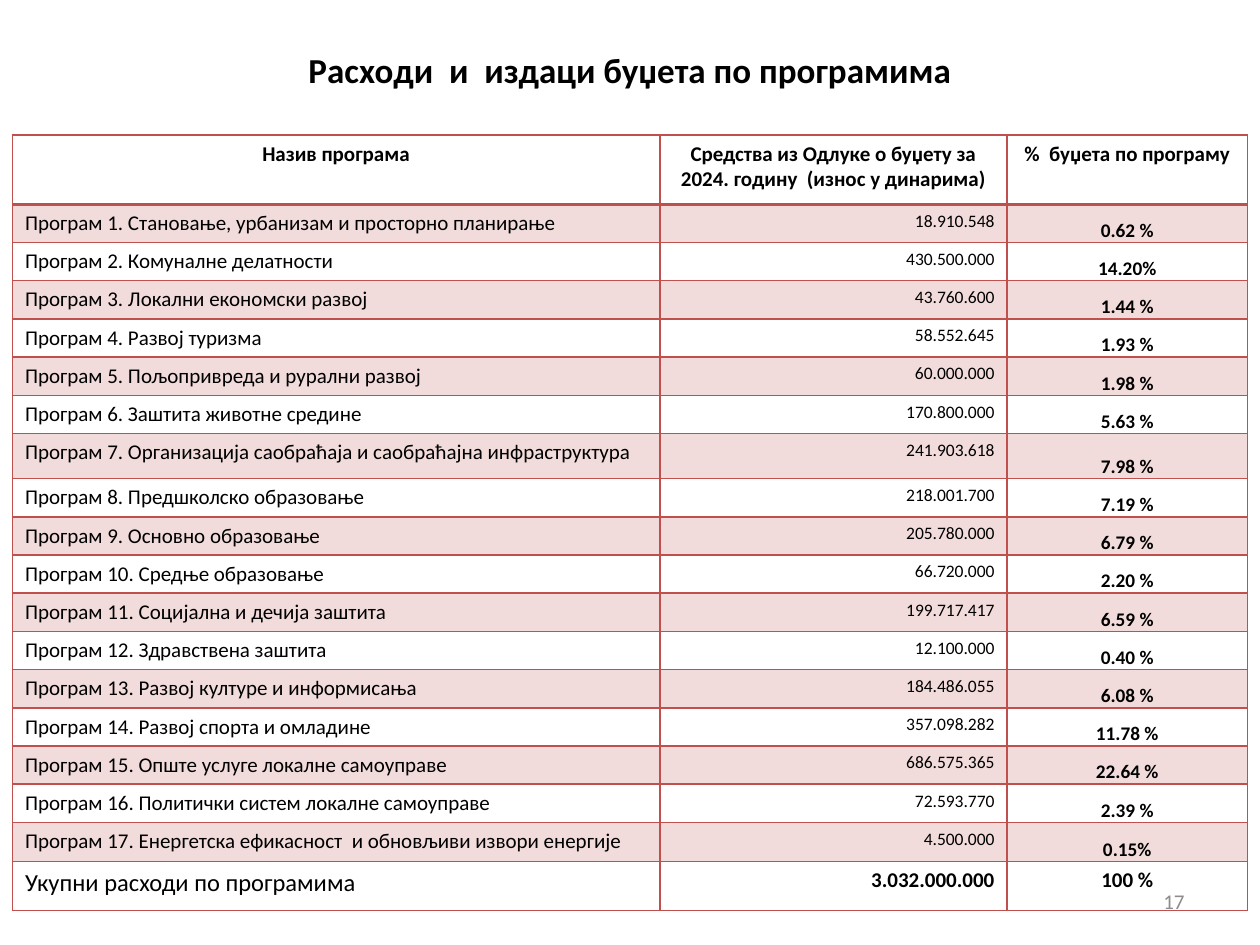
from lxml.etree import SubElement
from pptx import Presentation
from pptx.dml.color import RGBColor
from pptx.enum.text import MSO_ANCHOR as Anchor, PP_ALIGN as Align
from pptx.oxml.ns import qn
from pptx.util import Cm, Pt

FONT = "Calibri"
COLORS = {"text": "000000", "number": "8C8C8C", "border": "C0504D", "band": "F2DCDB"}
COLUMN_WIDTHS = [13.05, 7, 4.85]
HEADER_HEIGHT, ROW_HEIGHT, TOTAL_HEIGHT = 1.4, 0.77, 0.99
SPECIAL_HEIGHTS = {7: 0.91, 17: 0.79}

HEADERS = [
    "Назив програма",
    "Средства из Одлуке о буџету за 2024. годину  (износ у динарима)",
    "%  буџета по програму",
]
PROGRAMS = [
    ("Становање, урбанизам и просторно планирање", "18.910.548", "0.62 %"),
    ("Комуналне делатности", "430.500.000", "14.20%"),
    ("Локални економски развој", "43.760.600", "1.44 %"),
    ("Развој туризма", "58.552.645", "1.93 %"),
    ("Пољопривреда и рурални развој", "60.000.000", "1.98 %"),
    ("Заштита животне средине", "170.800.000", "5.63 %"),
    ("Организација саобраћаја и саобраћајна инфраструктура", "241.903.618", "7.98 %"),
    ("Предшколско образовање", "218.001.700", "7.19 %"),
    ("Основно образовање", "205.780.000", "6.79 %"),
    ("Средње образовање", "66.720.000", "2.20 %"),
    ("Социјална и дечија заштита", "199.717.417", "6.59 %"),
    ("Здравствена заштита", "12.100.000", "0.40 %"),
    ("Развој културе и информисања", "184.486.055", "6.08 %"),
    ("Развој спорта и омладине", "357.098.282", "11.78 %"),
    ("Опште услуге локалне самоуправе", "686.575.365", "22.64 %"),
    ("Политички систем локалне самоуправе", "72.593.770", "2.39 %"),
    ("Енергетска ефикасност  и обновљиви извори енергије", "4.500.000", "0.15%"),
]
TOTALS = ["Укупни расходи по програмима", "3.032.000.000", "100 %"]

# Size, bold and alignment of each column
HEADER_STYLES = [(12, True, Align.CENTER)] * 3
PROGRAM_STYLES = [(12, False, Align.LEFT), (10, False, Align.RIGHT), (11, True, Align.CENTER)]
TOTAL_STYLES = [(14, False, Align.LEFT), (12, True, Align.RIGHT), (12, True, Align.CENTER)]


def format_text(text_frame, text, size, bold, align, color="text"):
    text_frame.text = text
    paragraph = text_frame.paragraphs[0]
    paragraph.alignment = align
    font = paragraph.runs[0].font
    font.name, font.size, font.bold = FONT, Pt(size), bold
    font.color.rgb = RGBColor.from_string(COLORS[color])


def add_text(slide, box, text, size, bold, align, color="text"):
    text_frame = slide.shapes.add_textbox(*map(Cm, box)).text_frame
    text_frame.word_wrap = True
    text_frame.vertical_anchor = Anchor.MIDDLE
    format_text(text_frame, text, size, bold, align, color)


def set_borders(cell, top=1, bottom=1):
    """Draw the four cell borders, with widths in points."""
    properties = cell._tc.get_or_add_tcPr()
    for side, width in (("L", 1), ("R", 1), ("T", top), ("B", bottom)):
        line = SubElement(properties, qn(f"a:ln{side}"), w=str(Pt(width)))
        fill = SubElement(line, qn("a:solidFill"))
        SubElement(fill, qn("a:srgbClr"), val=COLORS["border"])


def fill_row(table, index, height, texts, styles, banded=False, top=1, bottom=1):
    table.rows[index].height = Cm(height)
    for cell, text, style in zip(table.rows[index].cells, texts, styles):
        format_text(cell.text_frame, text, *style)
        set_borders(cell, top, bottom)
        if banded:
            cell.fill.solid()
            cell.fill.fore_color.rgb = RGBColor.from_string(COLORS["band"])
        else:
            cell.fill.background()


def add_budget_table(slide):
    row_count = len(PROGRAMS) + 2
    frame = slide.shapes.add_table(
        row_count, len(HEADERS), Cm(0.25), Cm(2.72), Cm(sum(COLUMN_WIDTHS)), Cm(15.5)
    )
    table = frame.table
    table.first_row = table.horz_banding = False
    for column, width in zip(table.columns, COLUMN_WIDTHS):
        column.width = Cm(width)

    fill_row(table, 0, HEADER_HEIGHT, HEADERS, HEADER_STYLES, bottom=2)
    for number, (name, amount, share) in enumerate(PROGRAMS, start=1):
        texts = [f"Програм {number}. {name}", amount, share]
        height = SPECIAL_HEIGHTS.get(number, ROW_HEIGHT)
        fill_row(table, number, height, texts, PROGRAM_STYLES,
                 banded=number % 2 == 1, top=2 if number == 1 else 1)
        share_cell = table.cell(number, 2)
        share_cell.vertical_anchor = Anchor.BOTTOM
        share_cell.margin_left = share_cell.margin_right = share_cell.margin_top = Cm(0.03)
        share_cell.margin_bottom = 0
    fill_row(table, row_count - 1, TOTAL_HEIGHT, TOTALS, TOTAL_STYLES)


def main():
    presentation = Presentation()
    presentation.slide_width, presentation.slide_height = Cm(25.4), Cm(19.05)
    slide = presentation.slides.add_slide(presentation.slide_layouts[6])
    add_text(slide, (1.88, 0.33, 21.64, 2.16), "Расходи  и  издаци буџета по програмима",
             20, True, Align.CENTER)
    add_text(slide, (18.2, 17.65, 5.93, 1.02), "17", 12, False, Align.RIGHT, "number")
    add_budget_table(slide)
    presentation.save("out.pptx")


if __name__ == "__main__":
    main()
